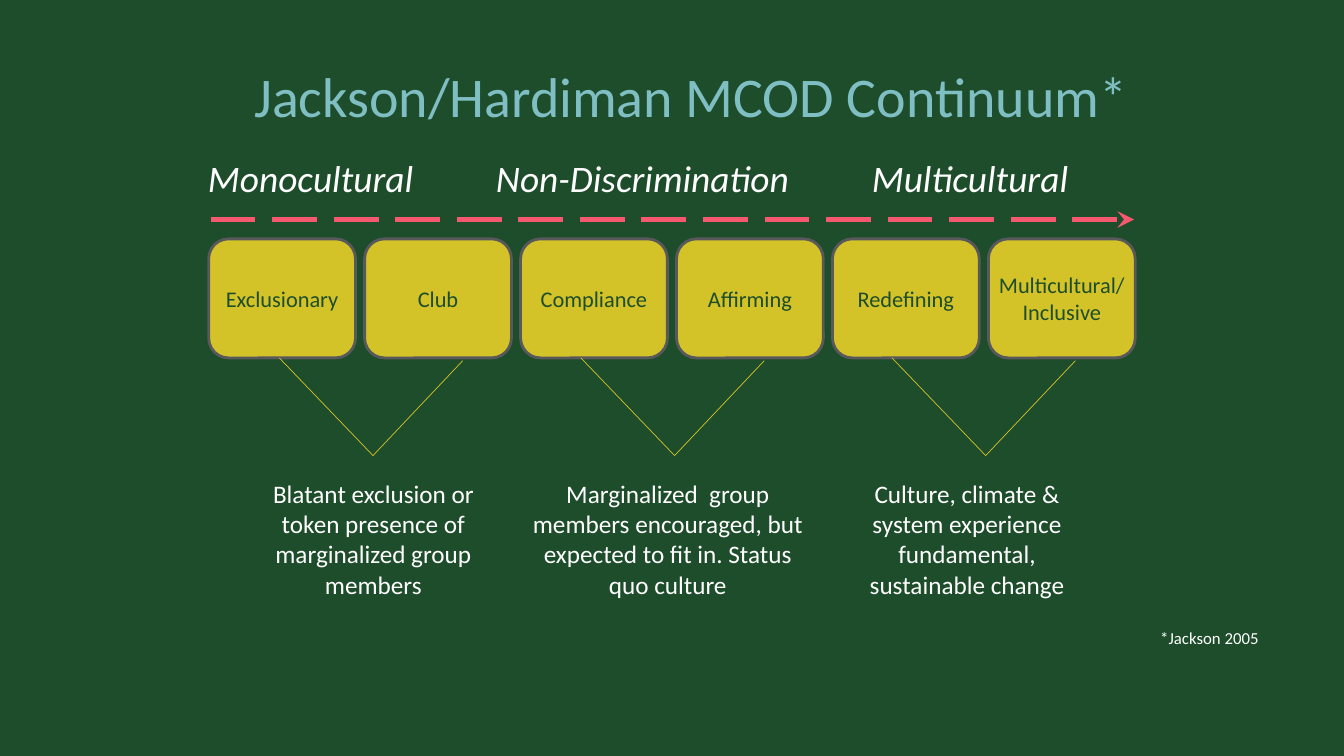
from lxml.etree import SubElement
from pptx import Presentation
from pptx.dml.color import RGBColor
from pptx.enum.dml import MSO_LINE
from pptx.enum.shapes import MSO_CONNECTOR, MSO_SHAPE
from pptx.enum.text import MSO_ANCHOR, MSO_AUTO_SIZE, PP_ALIGN
from pptx.oxml.ns import qn
from pptx.util import Cm, Pt

TITLE = "Jackson/Hardiman MCOD Continuum*"
FOOTNOTE = "*Jackson 2005"
STAGES = [
    ["Exclusionary"], ["Club"], ["Compliance"],
    ["Affirming"], ["Redefining"], ["Multicultural/", "Inclusive"],
]
PHASES = [
    {"name": "Monocultural", "name_left": 5.24, "tip": 9.4,
     "center": 9.41, "width": 5.87,
     "caption": "Blatant exclusion or token presence of marginalized group members"},
    {"name": "Non-Discrimination", "name_left": 12.5, "tip": 17,
     "center": 16.83, "width": 7.24,
     "caption": "Marginalized  group members encouraged, but expected to fit in. Status quo culture"},
    {"name": "Multicultural", "name_left": 21.97, "tip": 24.84,
     "center": 24.37, "width": 5.87,
     "caption": "Culture, climate & system experience fundamental, sustainable change"},
]

GREEN, YELLOW, GRAY = "1E4D2B", "D3C328", "59595B"
PINK, BLUE, WHITE = "F6586F", "7FBEC2", "FFFFFF"
TITLE_FONT = {"size": Pt(40), "color": BLUE}
PHASE_FONT = {"size": Pt(26.7), "italic": True, "color": WHITE}
STAGE_FONT = {"size": Pt(16), "color": GREEN}
CAPTION_FONT = {"size": Pt(18), "color": WHITE}
FOOTNOTE_FONT = {"size": Pt(12), "color": WHITE}

STAGE_LEFT, STAGE_TOP, STAGE_STEP = 5.26, 6.02, 3.93
STAGE_WIDTH, STAGE_HEIGHT = 3.7, 3
TIP_TOP = 11.48
BRACKET_ENDS = [(-2.36, 9.02), (2.26, 9.09)]


def color(value):
    return RGBColor.from_string(value)


def write(shape, lines, style, align=PP_ALIGN.CENTER, wrap=True):
    frame = shape.text_frame
    frame.auto_size = MSO_AUTO_SIZE.NONE
    frame.word_wrap = wrap
    frame.vertical_anchor = MSO_ANCHOR.MIDDLE
    for side in ("left", "top", "right", "bottom"):
        setattr(frame, f"margin_{side}", 0)
    frame.text = "\n".join(lines)
    for para in frame.paragraphs:
        para.alignment = align
        para.font.name = "Calibri"
        for name, value in style.items():
            if name == "color":
                para.font.color.rgb = color(value)
            else:
                setattr(para.font, name, value)


def add_text(page, bounds, text, style, align=PP_ALIGN.CENTER, wrap=True):
    box = page.shapes.add_textbox(*map(Cm, bounds))
    write(box, [text], style, align, wrap)


def add_line(page, points, line_color, width):
    connector = page.shapes.add_connector(MSO_CONNECTOR.STRAIGHT, *map(Cm, points))
    connector.line.color.rgb = color(line_color)
    connector.line.width = Pt(width)
    SubElement(connector._element.spPr, qn("a:effectLst"))
    return connector


def add_stage(page, index, lines):
    left = STAGE_LEFT + index * STAGE_STEP
    box = page.shapes.add_shape(
        MSO_SHAPE.ROUNDED_RECTANGLE,
        *map(Cm, (left, STAGE_TOP, STAGE_WIDTH, STAGE_HEIGHT)))
    box.shadow.inherit = False
    box.fill.solid()
    box.fill.fore_color.rgb = color(YELLOW)
    box.line.color.rgb = color(GRAY)
    box.line.width = Pt(2)
    write(box, lines, STAGE_FONT)


def add_phase(page, phase):
    add_text(page, (phase["name_left"], 3.63, 8, 1.7), phase["name"],
             PHASE_FONT, PP_ALIGN.LEFT, False)
    for offset, top in BRACKET_ENDS:
        add_line(page, (phase["tip"] + offset, top, phase["tip"], TIP_TOP), YELLOW, 0.5)
    left = phase["center"] - phase["width"] / 2
    add_text(page, (left, 11.86, phase["width"], 3.43), phase["caption"], CAPTION_FONT)


def main():
    deck = Presentation()
    deck.slide_width, deck.slide_height = Cm(33.87), Cm(19.05)
    page = deck.slides.add_slide(deck.slide_layouts[5])
    page.background.fill.solid()
    page.background.fill.fore_color.rgb = color(GREEN)

    title = page.shapes.title
    title.left, title.top, title.width, title.height = map(Cm, (1.75, 1.55, 31.32, 1.7))
    write(title, [TITLE], TITLE_FONT)

    for index, lines in enumerate(STAGES):
        add_stage(page, index, lines)
    arrow = add_line(page, (5.31, 5.53, 28.58, 5.53), PINK, 4)
    arrow.line.dash_style = MSO_LINE.LONG_DASH
    SubElement(arrow.line._get_or_add_ln(), qn("a:tailEnd"), type="stealth")
    for phase in PHASES:
        add_phase(page, phase)
    add_text(page, (29.24, 15.82, 3.76, 0.5), FOOTNOTE, FOOTNOTE_FONT, PP_ALIGN.LEFT)
    deck.save("out.pptx")


if __name__ == "__main__":
    main()
